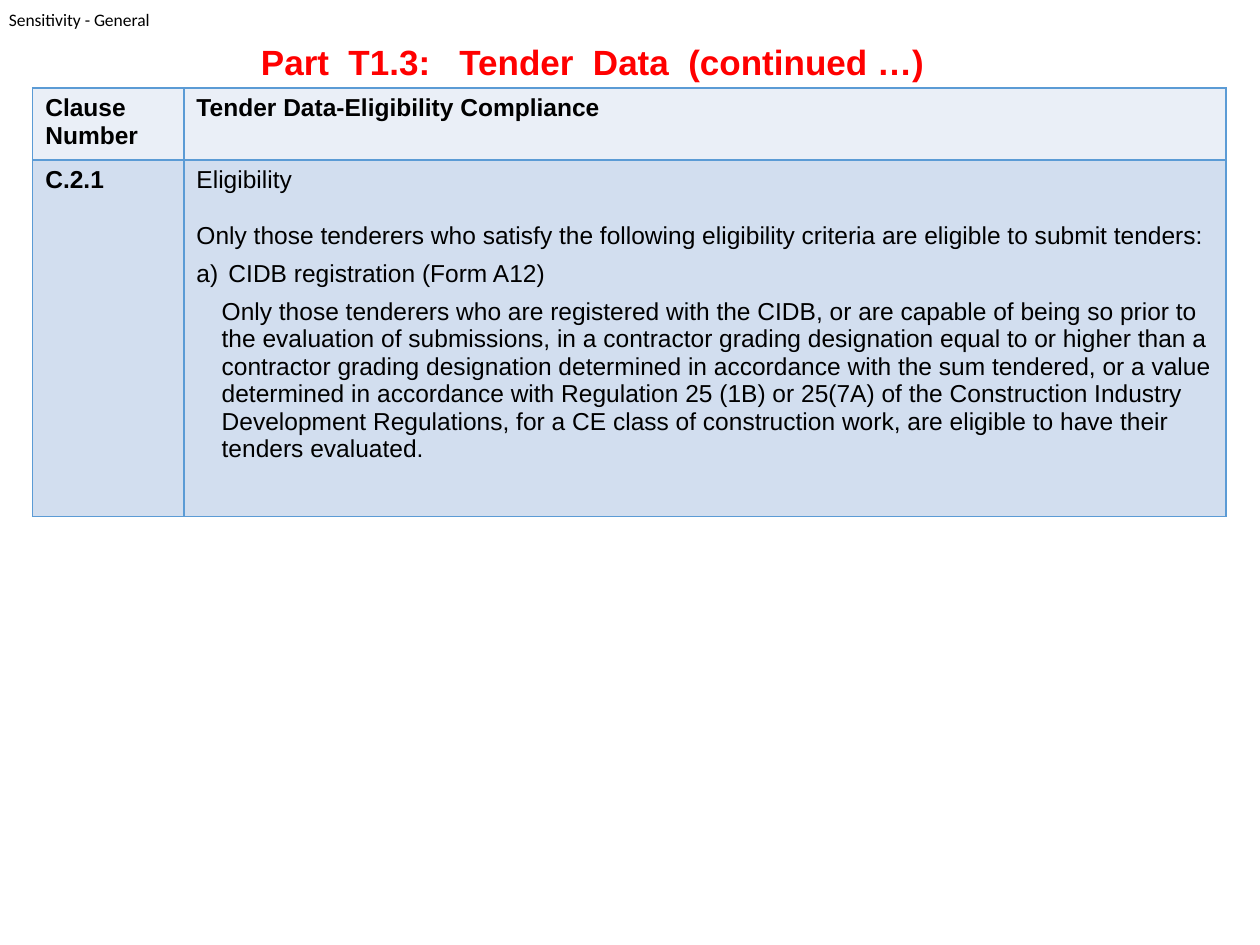
from collections import namedtuple
from dataclasses import dataclass

from lxml import etree
from pptx import Presentation
from pptx.dml.color import RGBColor
from pptx.enum import text
from pptx.oxml.ns import qn
from pptx.util import Inches, Pt

Box = namedtuple("Box", "left top width height")


@dataclass(frozen=True)
class Theme:
    body_font: str = "Arial"
    label_font: str = "Calibri"
    label_size: int = 10
    title_size: int = 20
    body_size: int = 14
    ink: str = "000000"
    title: str = "FF0000"
    border: str = "5B9BD5"
    header_fill: str = "EAEFF7"
    body_fill: str = "D2DEEF"


THEME = Theme()
TAB_STOP = Inches(0.2)
COLUMN_SHARES = (12.67, 87.33)
ROW_SHARES = (16.8, 83.2)
HEADER = (["Clause", "Number"], ["Tender Data-Eligibility Compliance"])
CLAUSE = "C.2.1"
INTRO = (
    "Only those tenderers who satisfy the following eligibility criteria "
    "are eligible to submit tenders:"
)
CRITERION = "a)\t CIDB registration (Form A12)"
DETAIL = (
    "Only those tenderers who are registered with the CIDB, or are capable of "
    "being so prior to the evaluation of submissions, in a contractor grading "
    "designation equal to or higher than a contractor grading designation "
    "determined in accordance with the sum tendered, or a value determined in "
    "accordance with Regulation 25 (1B) or 25(7A) of the Construction Industry "
    "Development Regulations, for a CE class of construction work, are eligible "
    "to have their tenders evaluated."
)


def share(length, percent):
    return round(length * percent / 100)


def place(deck, left, top, width, height):
    return Box(
        share(deck.slide_width, left),
        share(deck.slide_height, top),
        share(deck.slide_width, width),
        share(deck.slide_height, height),
    )


def add_span(para, words, size=THEME.body_size, bold=False,
             font=THEME.body_font, color=THEME.ink):
    span = para.add_run()
    span.text = words
    span.font.name = font
    span.font.size = Pt(size)
    span.font.bold = bold
    span.font.color.rgb = RGBColor.from_string(color)


def write_paragraphs(frame, lines, bold=False):
    paras = []
    for index, line in enumerate(lines):
        para = frame.add_paragraph() if index else frame.paragraphs[0]
        add_span(para, line, bold=bold)
        paras.append(para)
    return paras


def add_label(page, box):
    frame = page.shapes.add_textbox(*box).text_frame
    frame.margin_left = frame.margin_right = 0
    frame.margin_top = frame.margin_bottom = 0
    frame.word_wrap = False
    add_span(frame.paragraphs[0], "Sensitivity - General",
             THEME.label_size, font=THEME.label_font)


def add_title(page, box):
    frame = page.shapes.add_textbox(*box).text_frame
    frame.word_wrap = False
    frame.auto_size = text.MSO_AUTO_SIZE.SHAPE_TO_FIT_TEXT
    para = frame.paragraphs[0]
    para.alignment = text.PP_ALIGN.CENTER
    add_span(para, "Part  T1.3:   Tender  Data  (continued …)",
             THEME.title_size, bold=True, color=THEME.title)


def style_cell(cell, fill):
    properties = cell._tc.get_or_add_tcPr()
    for side in ("a:lnL", "a:lnR", "a:lnT", "a:lnB"):
        line = etree.SubElement(properties, qn(side), w=str(Pt(1)))
        solid = etree.SubElement(line, qn("a:solidFill"))
        etree.SubElement(solid, qn("a:srgbClr"), val=THEME.border)
    cell.fill.solid()
    cell.fill.fore_color.rgb = RGBColor.from_string(fill)


def write_eligibility(frame):
    lines = ["Eligibility", INTRO, CRITERION, DETAIL]
    heading, intro, criterion, detail = write_paragraphs(frame, lines)
    heading.space_after = Pt(16)
    intro.space_after = criterion.space_after = Pt(6)
    stops = etree.SubElement(criterion._p.get_or_add_pPr(), qn("a:tabLst"))
    etree.SubElement(stops, qn("a:tab"), pos=str(TAB_STOP), algn="l")
    detail.level = 1
    indent = detail._p.get_or_add_pPr()
    indent.set("marL", str(TAB_STOP))
    indent.set("indent", "0")


def add_clause_table(page, box):
    table = page.shapes.add_table(2, 2, *box).table
    for column, percent in zip(table.columns, COLUMN_SHARES):
        column.width = share(box.width, percent)
    for row, percent in zip(table.rows, ROW_SHARES):
        row.height = share(box.height, percent)
    for row, fill in zip(table.rows, (THEME.header_fill, THEME.body_fill)):
        for cell in row.cells:
            style_cell(cell, fill)
    for column, lines in enumerate(HEADER):
        write_paragraphs(table.cell(0, column).text_frame, lines, bold=True)
    write_paragraphs(table.cell(1, 0).text_frame, [CLAUSE], bold=True)
    write_eligibility(table.cell(1, 1).text_frame)


def main():
    deck = Presentation()
    deck.slide_width, deck.slide_height = Inches(10), Inches(7.5)
    page = deck.slides.add_slide(deck.slide_layouts[6])
    add_label(page, place(deck, 0.7, 0.93, 11.5, 2.27))
    add_title(page, place(deck, 19.3, 3.6, 55.5, 5.87))
    add_clause_table(page, place(deck, 2.6, 9.33, 94.7, 45.33))
    deck.save("out.pptx")


if __name__ == "__main__":
    main()
